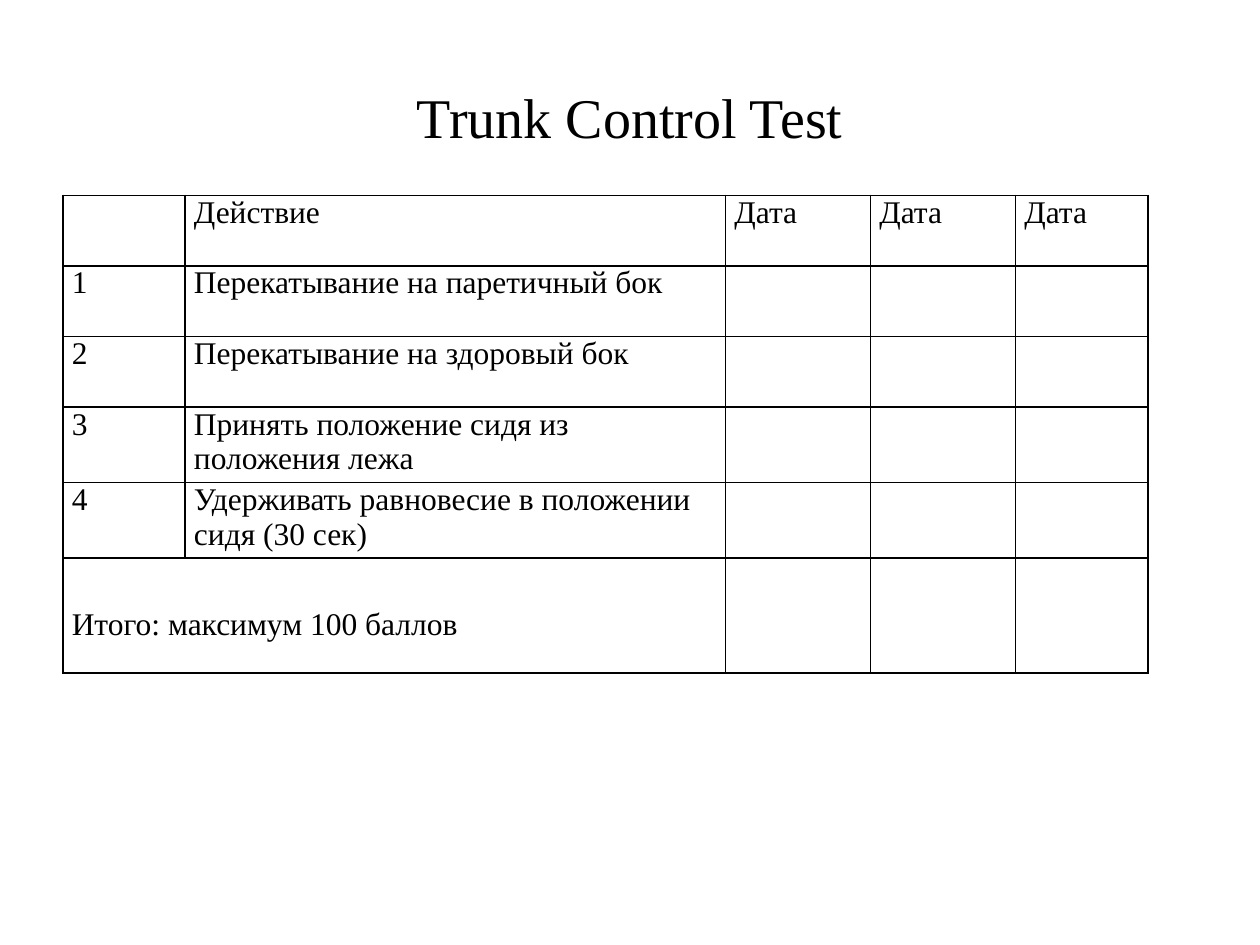
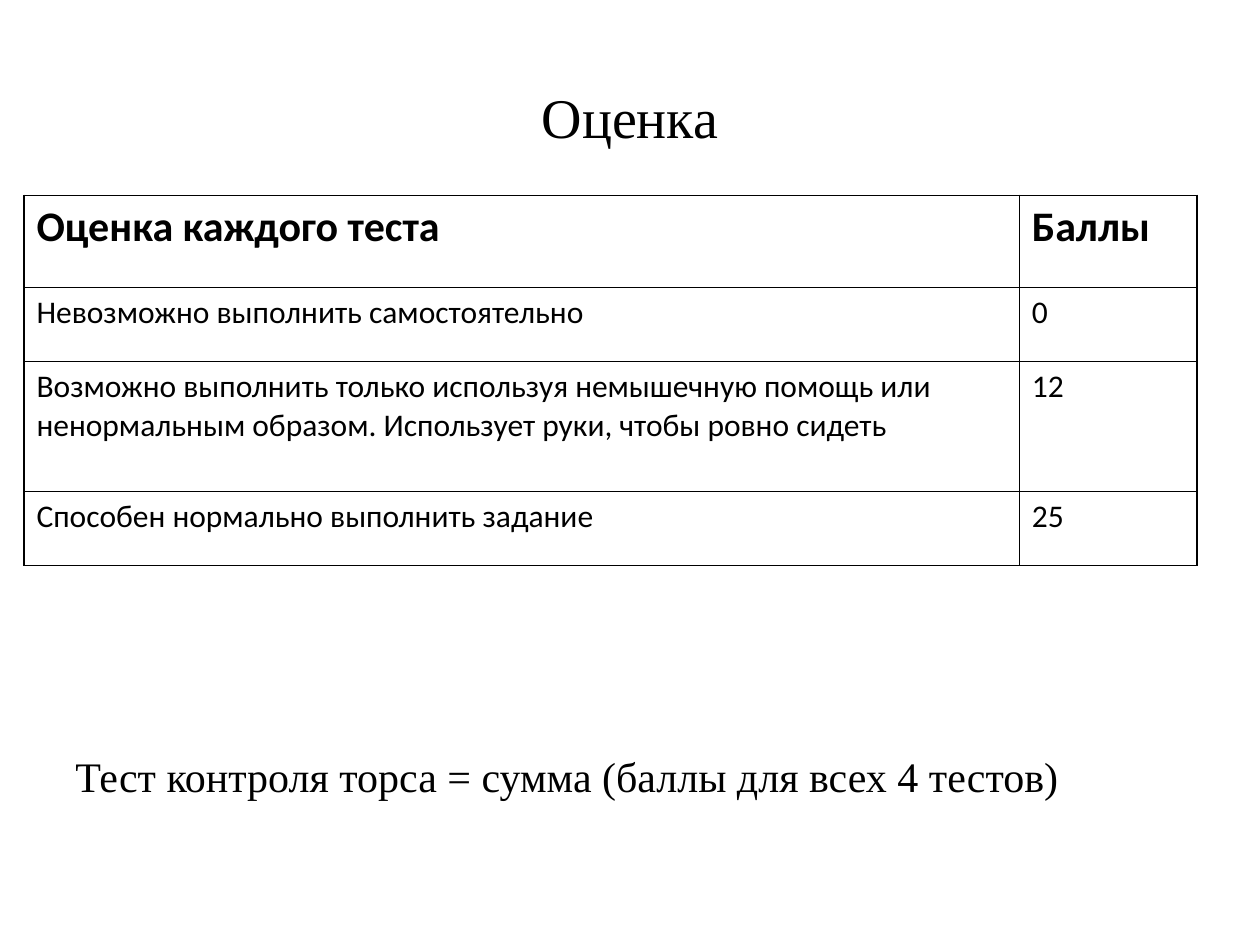
"""Build two slides on the Trunk Control Test."""
import pptx
import pptx.dml.color
import pptx.enum.text
import pptx.oxml
import pptx.oxml.ns
import pptx.util

INK = {"text": "000000", "line": "000000"}
SERIF, SANS = "Times New Roman", "Calibri"
WIDE, HIGH = 10, 7.5
TOP = 1.55
inch = pptx.util.Inches


def style(frame, face, size, bold=False):
    """Give every paragraph of a frame one font."""
    for para in frame.paragraphs:
        font = para.font
        font.name, font.size, font.bold = face, pptx.util.Pt(size), bold
        font.color.rgb = pptx.dml.color.RGBColor.from_string(INK["text"])


def label(slide, box, text, size, wrap=True):
    """Place a serif text box and return its frame."""
    frame = slide.shapes.add_textbox(*map(inch, box)).text_frame
    frame.word_wrap = wrap
    frame.text = text
    style(frame, SERIF, size)
    return frame


def title(slide, text):
    """Centre the slide title in the top band."""
    box = 0.05 * WIDE, 0.04 * HIGH, 0.9 * WIDE, TOP - 0.04 * HIGH
    frame = label(slide, box, text, 32)
    frame.vertical_anchor = pptx.enum.text.MSO_ANCHOR.MIDDLE
    frame.paragraphs[0].alignment = pptx.enum.text.PP_ALIGN.CENTER


def edge(cell):
    """Draw a one-point line on each side of a cell."""
    props = cell._tc.get_or_add_tcPr()
    for side in "LRTB":
        props.append(pptx.oxml.parse_xml(
            f'<a:ln{side} {pptx.oxml.ns.nsdecls("a")} w="12700"><a:solidFill>'
            f'<a:srgbClr val="{INK["line"]}"/></a:solidFill></a:ln{side}>'))


def grid(slide, left, cols, rows, data, face, pad=(0.1, 0.05)):
    """Place a ruled table with plain cells and return it."""
    box = left, TOP, sum(cols), sum(rows)
    table = slide.shapes.add_table(len(rows), len(cols), *map(inch, box)).table
    table.first_row = table.horz_banding = False
    for col, width in zip(table.columns, cols):
        col.width = inch(width)
    for row, high, words in zip(table.rows, rows, data):
        row.height = inch(high)
        for cell, word in zip(row.cells, words):
            cell.text = word
            cell.margin_left = cell.margin_right = inch(pad[0])
            cell.margin_top = cell.margin_bottom = inch(pad[1])
            style(cell.text_frame, face, 18)
            edge(cell)
            cell.fill.background()
    return table


def tasks(slide):
    """Fill the slide that lists the four tasks."""
    title(slide, "Trunk Control Test")
    acts = ["Перекатывание на паретичный бок",
            "Перекатывание на здоровый бок",
            "Принять положение сидя из положения лежа",
            "Удерживать равновесие в положении сидя (30 сек)"]
    data = [["", "Действие"] + ["Дата"] * 3]
    data += [[str(num), act, "", "", ""] for num, act in enumerate(acts, 1)]
    data += [["Итого: максимум 100 баллов", "", "", "", ""]]
    cols = [0.97, 4.29, 1.15, 1.15, 1.05]
    rows = [0.56] * 3 + [0.6] * 2 + [0.91]
    table = grid(slide, 0.05 * WIDE, cols, rows, data, SERIF, (0.07, 0))
    total = table.cell(len(acts) + 1, 0)
    total.merge(table.cell(len(acts) + 1, 1))
    total.margin_top = inch(0.39)


def marks(slide):
    """Fill the slide that gives the scores."""
    title(slide, "Оценка")
    label(slide, (0.05 * WIDE, 5.91, 8.08, 0.5),
          "Тест контроля торса = сумма (баллы для всех 4 тестов)", 24, False)
    data = [("Оценка каждого теста", "Баллы"),
            ("Невозможно выполнить самостоятельно", "0"),
            ("Возможно выполнить только используя немышечную помощь или "
             "ненормальным образом. Использует руки, чтобы ровно сидеть", "12"),
            ("Способен нормально выполнить задание", "25")]
    table = grid(slide, 0.19, [7.9, 1.41], [0.73, 0.59, 1.03, 0.59], data, SANS)
    for cell in table.rows[0].cells:
        style(cell.text_frame, SANS, 24, True)


def main():
    """Build and save the deck."""
    deck = pptx.Presentation()
    deck.slide_width, deck.slide_height = inch(WIDE), inch(HIGH)
    for fill in (tasks, marks):
        fill(deck.slides.add_slide(deck.slide_layouts[6]))
    deck.save("out.pptx")


if __name__ == "__main__":
    main()
